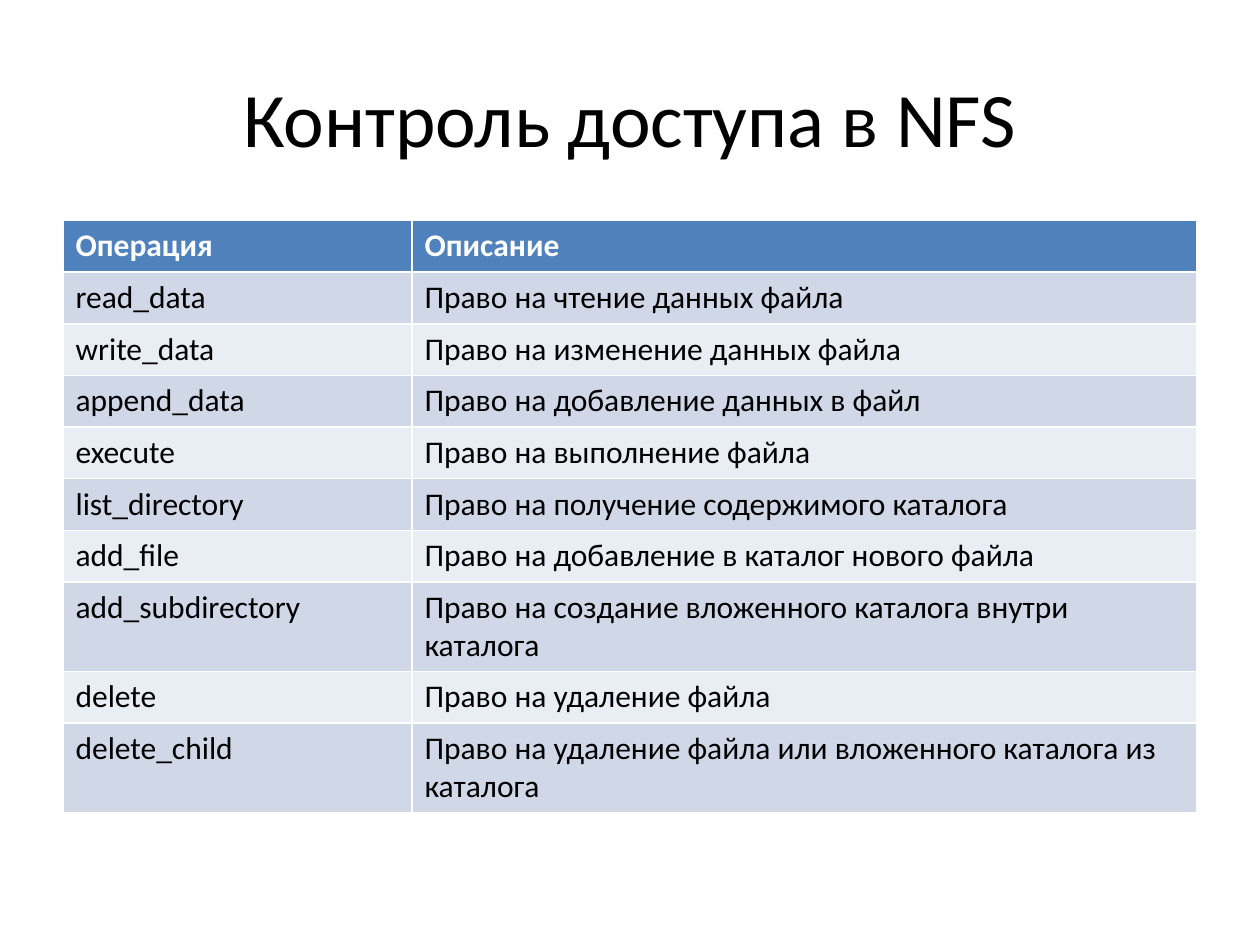
from pptx import Presentation
from pptx.dml.color import RGBColor
from pptx.enum.text import MSO_ANCHOR, PP_ALIGN
from pptx.util import Inches, Pt

CENTER = PP_ALIGN.CENTER
LEFT = PP_ALIGN.LEFT
MIDDLE = MSO_ANCHOR.MIDDLE
TITLE_ONLY = 5

BLACK = RGBColor(0x00, 0x00, 0x00)
WHITE = RGBColor(0xFF, 0xFF, 0xFF)
HEADER = RGBColor(0x4F, 0x81, 0xBD)
BANDS = (RGBColor(0xE9, 0xED, 0xF4), RGBColor(0xD0, 0xD8, 0xE8))

OPERATIONS = [
    ("Операция", "Описание"),
    ("read_data", "Право на чтение данных файла"),
    ("write_data", "Право на изменение данных файла"),
    ("append_data", "Право на добавление данных в файл"),
    ("execute", "Право на выполнение файла"),
    ("list_directory", "Право на получение содержимого каталога"),
    ("add_file", "Право на добавление в каталог нового файла"),
    ("add_subdirectory", "Право на создание вложенного каталога внутри каталога"),
    ("delete", "Право на удаление файла"),
    ("delete_child", "Право на удаление файла или вложенного каталога из каталога"),
]


class SlideBuilder:
    font = "Calibri"
    title_size = 44
    body_size = 18

    def __init__(self, prs):
        self.slide = prs.slides.add_slide(prs.slide_layouts[TITLE_ONLY])

    def add_text(self, tf, text, size, color, bold=False, align=LEFT):
        p = tf.paragraphs[0]
        p.alignment = align
        r = p.add_run()
        r.text = text
        r.font.name = self.font
        r.font.size = Pt(size)
        r.font.bold = bold
        r.font.color.rgb = color

    def title(self, text, left, top, width, height):
        sp = self.slide.shapes.title
        sp.left, sp.top = Inches(left), Inches(top)
        sp.width, sp.height = Inches(width), Inches(height)
        sp.text_frame.vertical_anchor = MIDDLE
        self.add_text(sp.text_frame, text, self.title_size, BLACK, align=CENTER)

    def table(self, rows, left, top, col_widths, row_height):
        frame = self.slide.shapes.add_table(
            len(rows), len(col_widths), Inches(left), Inches(top),
            Inches(sum(col_widths)), Inches(row_height * len(rows)))
        table = frame.table
        for column, width in zip(table.columns, col_widths):
            column.width = Inches(width)
        for i, row in enumerate(rows):
            table.rows[i].height = Inches(row_height)
            is_header = i == 0
            for j, text in enumerate(row):
                cell = table.cell(i, j)
                cell.fill.solid()
                cell.fill.fore_color.rgb = HEADER if is_header else BANDS[i % 2]
                self.add_text(cell.text_frame, text, self.body_size,
                              WHITE if is_header else BLACK, bold=is_header)


def main():
    prs = Presentation()
    prs.slide_width, prs.slide_height = Inches(10), Inches(7.5)
    s = SlideBuilder(prs)
    s.title("Контроль доступа в NFS", 0.5, 0.3, 9, 1.25)
    s.table(OPERATIONS, 0.5, 1.75, (2.77, 6.23), 0.41)
    prs.save("out.pptx")


if __name__ == "__main__":
    main()
